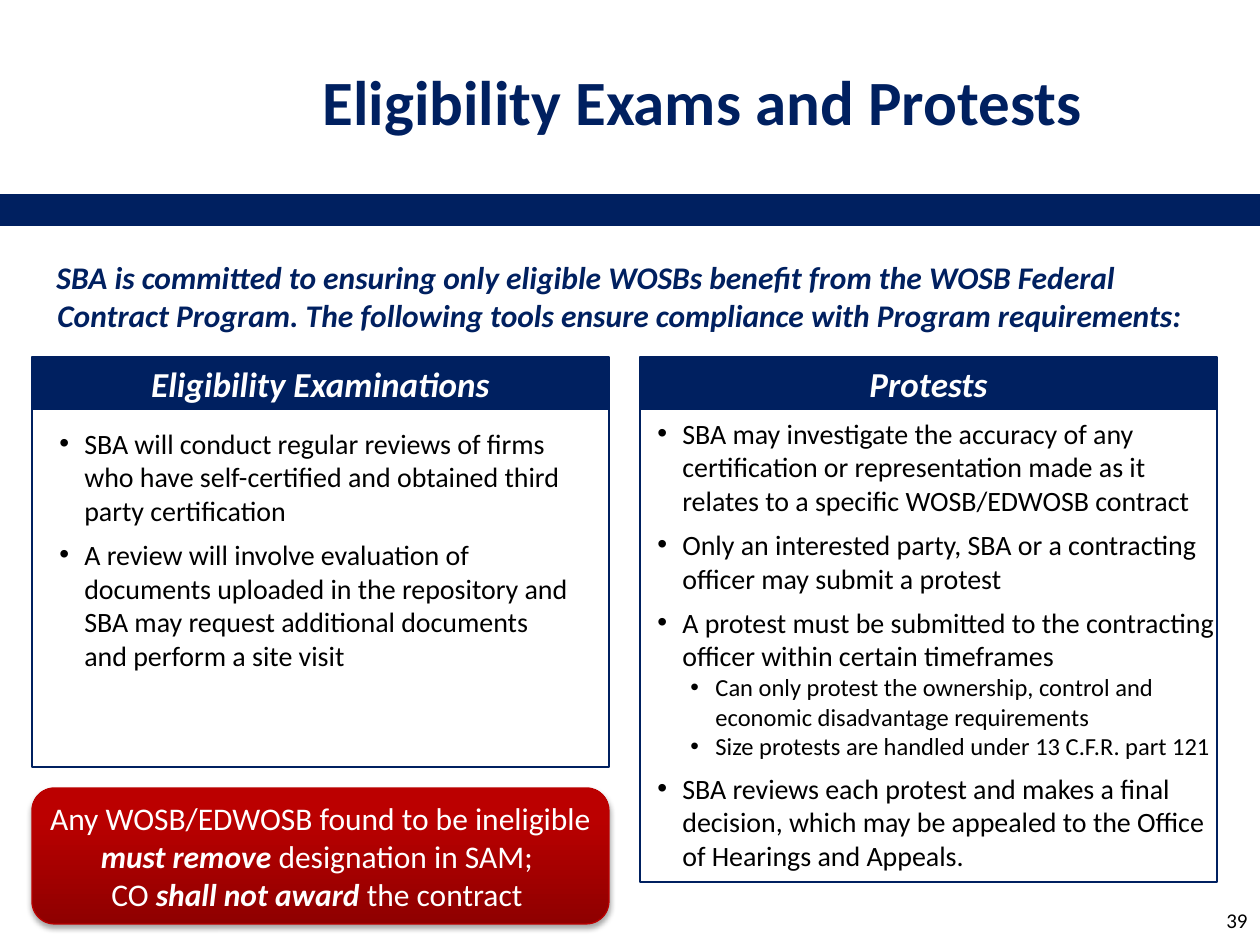
from lxml import etree
from pptx import Presentation
from pptx import util as u
from pptx.dml.color import RGBColor
from pptx.enum import shapes, text
from pptx.oxml import ns

PX = 914400 / 126
FONT = "Calibri"
NAVY = RGBColor(0x00, 0x20, 0x60)
WHITE = RGBColor(0xFF, 0xFF, 0xFF)
BLACK = RGBColor(0x00, 0x00, 0x00)
RED = RGBColor(0xBB, 0x00, 0x00)
DARK_RED = RGBColor(0x8F, 0x00, 0x00)

PANEL_TOP, PANEL_WIDTH, HEADER_HEIGHT = 357, 577, 53
LEFT_X, RIGHT_X = 32, 640

INTRO = ("SBA is committed to ensuring only eligible WOSBs benefit from the WOSB "
         "Federal Contract Program. The following tools ensure compliance with "
         "Program requirements:")
# Each bullet is (level, text)
EXAMINATIONS = [
    (0, "SBA will conduct regular reviews of firms who have self-certified and "
        "obtained third party certification"),
    (0, "A review will involve evaluation of documents uploaded in the repository "
        "and SBA may request additional documents and perform a site visit"),
]
PROTESTS = [
    (0, "SBA may investigate the accuracy of any certification or representation "
        "made as it relates to a specific WOSB/EDWOSB contract"),
    (0, "Only an interested party, SBA or a contracting officer may submit a protest"),
    (0, "A protest must be submitted to the contracting officer within certain "
        "timeframes"),
    (1, "Can only protest the ownership, control and economic disadvantage "
        "requirements"),
    (1, "Size protests are handled under 13 C.F.R. part 121"),
    (0, "SBA reviews each protest and makes a final decision, which may be appealed "
        "to the Office of Hearings and Appeals."),
]
# Lines of (text, emphasised) runs
WARNING = [
    [("Any WOSB/EDWOSB found to be ineligible ", False), ("must remove ", True),
     ("designation in SAM; ", False)],
    [("CO ", False), ("shall not award ", True), ("the contract ", False)],
]


def px(*lengths):
    return [u.Emu(round(length * PX)) for length in lengths]


def add_xml(parent, tag, **attributes):
    return etree.SubElement(parent, ns.qn(tag), attributes)


def format_run(run, size, color, bold=False, italic=False):
    font = run.font
    font.name, font.size, font.color.rgb = FONT, u.Pt(size), color
    font.bold, font.italic = bold, italic


def format_paragraph(paragraph, size, color, align=text.PP_ALIGN.LEFT, **style):
    paragraph.alignment = align
    for run in paragraph.runs:
        format_run(run, size, color, **style)


def indent(paragraph, margin, first_line):
    properties = paragraph._p.get_or_add_pPr()
    properties.set("marL", str(px(margin)[0]))
    properties.set("indent", str(px(first_line)[0]))
    return properties


def add_text_box(slide, box):
    frame = slide.shapes.add_textbox(*px(*box)).text_frame
    frame.word_wrap = True
    return frame


def add_bullets(slide, box, bullets):
    frame = add_text_box(slide, box)
    frame.text = "\n".join(words for _, words in bullets)
    for index, (paragraph, (level, _)) in enumerate(zip(frame.paragraphs, bullets)):
        properties = indent(paragraph, 73 if level else 40, -25)
        add_xml(properties, "a:buFont", typeface="Arial")
        add_xml(properties, "a:buChar", char="•")
        paragraph.level = level
        paragraph.space_before = u.Pt(6 if index and not level else 0)
        format_paragraph(paragraph, 14 if level else 16, BLACK)


def add_shape(slide, kind, box):
    shape = slide.shapes.add_shape(kind, *px(*box))
    shape.shadow.inherit = False
    shape.text_frame.word_wrap = True
    shape.text_frame.vertical_anchor = text.MSO_ANCHOR.MIDDLE
    return shape


def add_panel(slide, left, height, heading):
    rectangle = shapes.MSO_SHAPE.RECTANGLE
    header = add_shape(slide, rectangle, (left, PANEL_TOP, PANEL_WIDTH, HEADER_HEIGHT))
    header.fill.solid()
    header.fill.fore_color.rgb = NAVY
    header.line.fill.background()
    header.text_frame.text = heading
    format_paragraph(header.text_frame.paragraphs[0], 20, WHITE,
                     text.PP_ALIGN.CENTER, bold=True, italic=True)
    border = add_shape(slide, rectangle, (left, PANEL_TOP, PANEL_WIDTH, height))
    border.fill.background()
    border.line.color.rgb = NAVY
    border.line.width = u.Pt(1.5)


def add_soft_shadow(shape):
    effects = shape._element.spPr.find(ns.qn("a:effectLst"))
    shadow = add_xml(effects, "a:outerShdw", blurRad=str(u.Pt(3.1)),
                     dist=str(u.Pt(1.8)), dir="5400000", rotWithShape="0")
    color = add_xml(shadow, "a:srgbClr", val=str(BLACK))
    add_xml(color, "a:alpha", val="35000")


def add_warning(slide, box):
    shape = add_shape(slide, shapes.MSO_SHAPE.ROUNDED_RECTANGLE, box)
    shape.fill.gradient()
    shape.fill.gradient_angle = 90
    for stop, color, position in zip(shape.fill.gradient_stops, (DARK_RED, RED), (0, 0.8)):
        stop.color.rgb, stop.position = color, position
    shape.line.color.rgb = RED
    shape.line.width = u.Pt(0.75)
    add_soft_shadow(shape)
    frame = shape.text_frame
    frame.margin_left = frame.margin_right = u.Inches(0.05)
    paragraph = frame.paragraphs[0]
    paragraph.alignment = text.PP_ALIGN.CENTER
    for index, line in enumerate(WARNING):
        if index:
            paragraph.add_line_break()
        for words, emphasised in line:
            run = paragraph.add_run()
            run.text = words
            format_run(run, 18, WHITE, emphasised, emphasised)


def add_title(slide, box, words):
    title = slide.shapes.title
    title.left, title.top, title.width, title.height = px(*box)
    title.text_frame.text = words
    title.text_frame.vertical_anchor = text.MSO_ANCHOR.MIDDLE
    format_paragraph(title.text_frame.paragraphs[0], 36, NAVY, bold=True)


def add_title_bar(slide, y):
    bar = slide.shapes.add_connector(shapes.MSO_CONNECTOR.STRAIGHT, *px(0, y, 1260, y))
    bar.line.color.rgb = NAVY
    bar.line.width = u.Pt(18)
    add_xml(bar._element.spPr, "a:effectLst")


def add_intro(slide, box):
    frame = add_text_box(slide, box)
    frame.text = INTRO
    paragraph = frame.paragraphs[0]
    indent(paragraph, 15, -1)
    format_paragraph(paragraph, 18, NAVY, bold=True, italic=True)


def add_page_number(slide, box, number):
    frame = add_text_box(slide, box)
    frame.text = number
    frame.vertical_anchor = text.MSO_ANCHOR.MIDDLE
    format_paragraph(frame.paragraphs[0], 12, BLACK, text.PP_ALIGN.RIGHT)


def main():
    presentation = Presentation()
    presentation.slide_width, presentation.slide_height = px(1260, 945)
    slide = presentation.slides.add_slide(presentation.slide_layouts[5])
    add_title_bar(slide, 210)
    add_title(slide, (310, 21, 855, 158), "Eligibility Exams and Protests")
    add_intro(slide, (30, 252, 1176, 42))
    add_panel(slide, LEFT_X, 410, "Eligibility Examinations")
    add_bullets(slide, (32, 420, 557, 357), EXAMINATIONS)
    add_panel(slide, RIGHT_X, 525, "Protests")
    add_bullets(slide, (630, 410, 599, 472), PROTESTS)
    add_warning(slide, (LEFT_X, 788, PANEL_WIDTH, 136))
    add_page_number(slide, (966, 895, 294, 50), "39")
    presentation.save("out.pptx")


if __name__ == "__main__":
    main()
